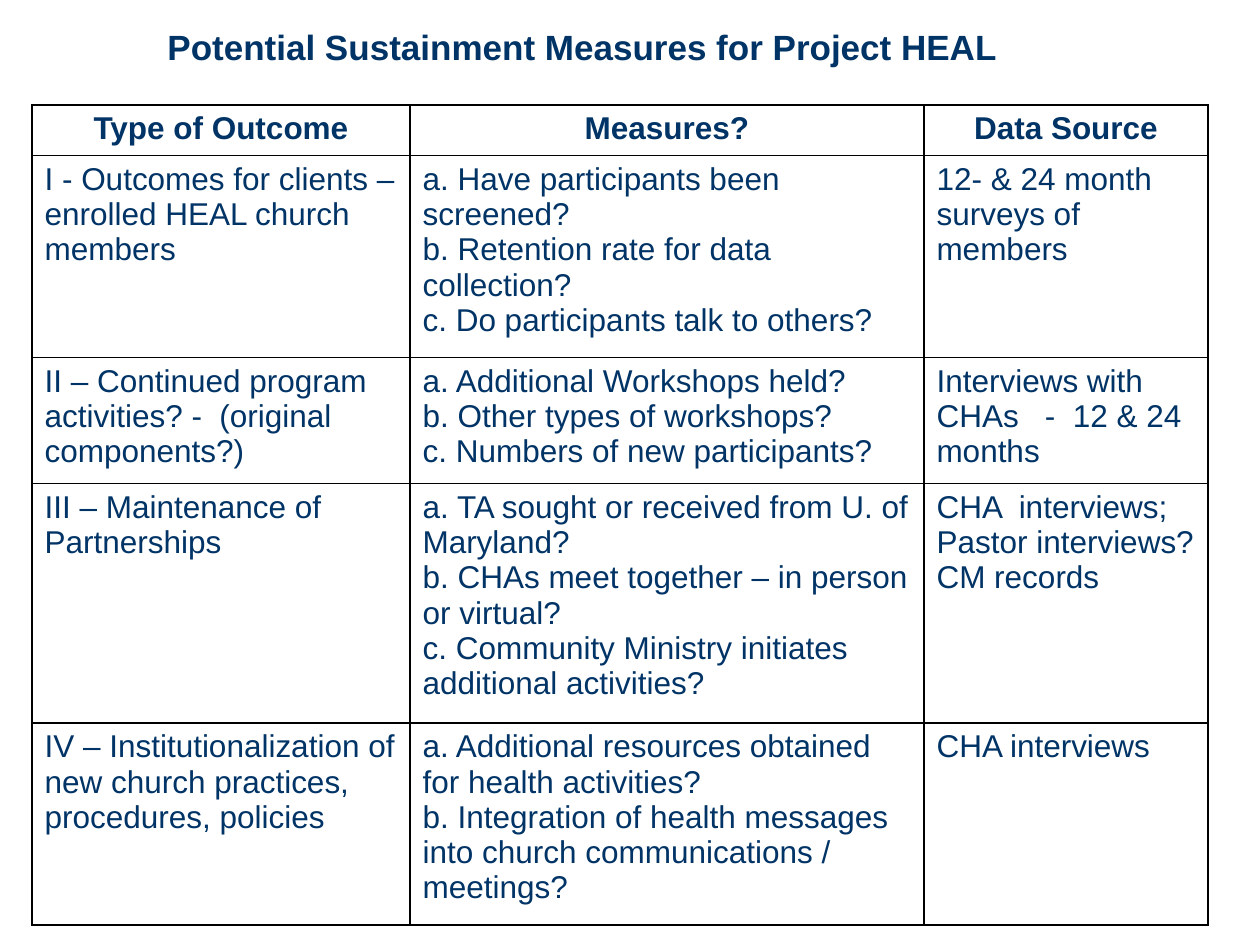
from lxml.etree import SubElement
from pptx import Presentation
from pptx.dml.color import RGBColor
from pptx.enum.text import MSO_ANCHOR, PP_ALIGN
from pptx.oxml.ns import qn
from pptx.util import Pt

SCALE = 914400 / 126  # EMU in one px
NAVY = RGBColor(0x00, 0x33, 0x66)
BLACK = RGBColor(0x00, 0x00, 0x00)
WHITE = RGBColor(0xFF, 0xFF, 0xFF)
FONT = "Arial"

TITLE = "Potential Sustainment Measures for Project HEAL"
COLS = [378, 514, 284]
ROWS = [50, 202, 126, 239, 202]
HEAD = [["Type of Outcome"], ["Measures?"], ["Data Source"]]
BODY = [
    [
        ["I - Outcomes for clients – enrolled HEAL church members"],
        ["a. Have participants been screened?",
         "b. Retention rate for data collection?",
         "c. Do participants talk to others?"],
        ["12- & 24 month surveys of  members"],
    ],
    [
        ["II – Continued program activities? -  (original components?)"],
        ["a. Additional Workshops held?",
         "b. Other types of workshops?",
         "c. Numbers of new participants?"],
        ["Interviews with CHAs   -  12 & 24 months"],
    ],
    [
        ["III – Maintenance of Partnerships"],
        ["a. TA sought or received from U. of Maryland?",
         "b. CHAs meet together – in person or virtual?",
         "c. Community Ministry initiates additional activities?"],
        ["CHA  interviews;", "Pastor interviews?", "CM records"],
    ],
    [
        ["IV – Institutionalization of new church practices, "
         "procedures, policies"],
        ["a. Additional resources obtained for health activities?",
         "b. Integration of health messages into church "
         "communications / meetings?"],
        ["CHA interviews"],
    ],
]


def px(n):
    return round(n * SCALE)


def write(frame, lines, size, bold, align):
    """Fill a text frame with one paragraph for each line."""
    for i, line in enumerate(lines):
        para = frame.add_paragraph() if i else frame.paragraphs[0]
        para.alignment = align
        run = para.add_run()
        run.text = line
        font = run.font
        font.name, font.size, font.bold = FONT, Pt(size), bold
        font.color.rgb = NAVY


def edge(cell):
    """Draw a thin line on all four sides of a cell."""
    props = cell._tc.get_or_add_tcPr()
    for i, side in enumerate(("lnL", "lnR", "lnT", "lnB")):
        line = props.makeelement(qn(f"a:{side}"), {"w": str(Pt(1))})
        fill = SubElement(line, qn("a:solidFill"))
        SubElement(fill, qn("a:srgbClr"), val=str(BLACK))
        props.insert(i, line)  # borders come before the fill


def add_title(slide, left, top, width, height):
    box = slide.shapes.add_textbox(px(left), px(top), px(width), px(height))
    frame = box.text_frame
    frame.word_wrap = True
    frame.vertical_anchor = MSO_ANCHOR.MIDDLE
    write(frame, [TITLE], 20, True, PP_ALIGN.CENTER)


def add_grid(slide, left, top):
    shape = slide.shapes.add_table(
        len(ROWS), len(COLS), px(left), px(top), px(sum(COLS)), px(sum(ROWS)))
    table = shape.table
    for col, width in zip(table.columns, COLS):
        col.width = px(width)
    for r, (row, height, texts) in enumerate(
            zip(table.rows, ROWS, [HEAD] + BODY)):
        row.height = px(height)
        head = r == 0
        align = PP_ALIGN.CENTER if head else PP_ALIGN.LEFT
        for cell, lines in zip(row.cells, texts):
            cell.fill.solid()
            cell.fill.fore_color.rgb = WHITE
            edge(cell)
            write(cell.text_frame, lines, 18, head, align)


def main():
    deck = Presentation()
    deck.slide_width, deck.slide_height = px(1260), px(945)
    slide = deck.slides.add_slide(deck.slide_layouts[6])
    add_title(slide, 42, 19, 1081, 55)
    add_grid(slide, 32, 105)
    deck.save("out.pptx")


if __name__ == "__main__":
    main()
